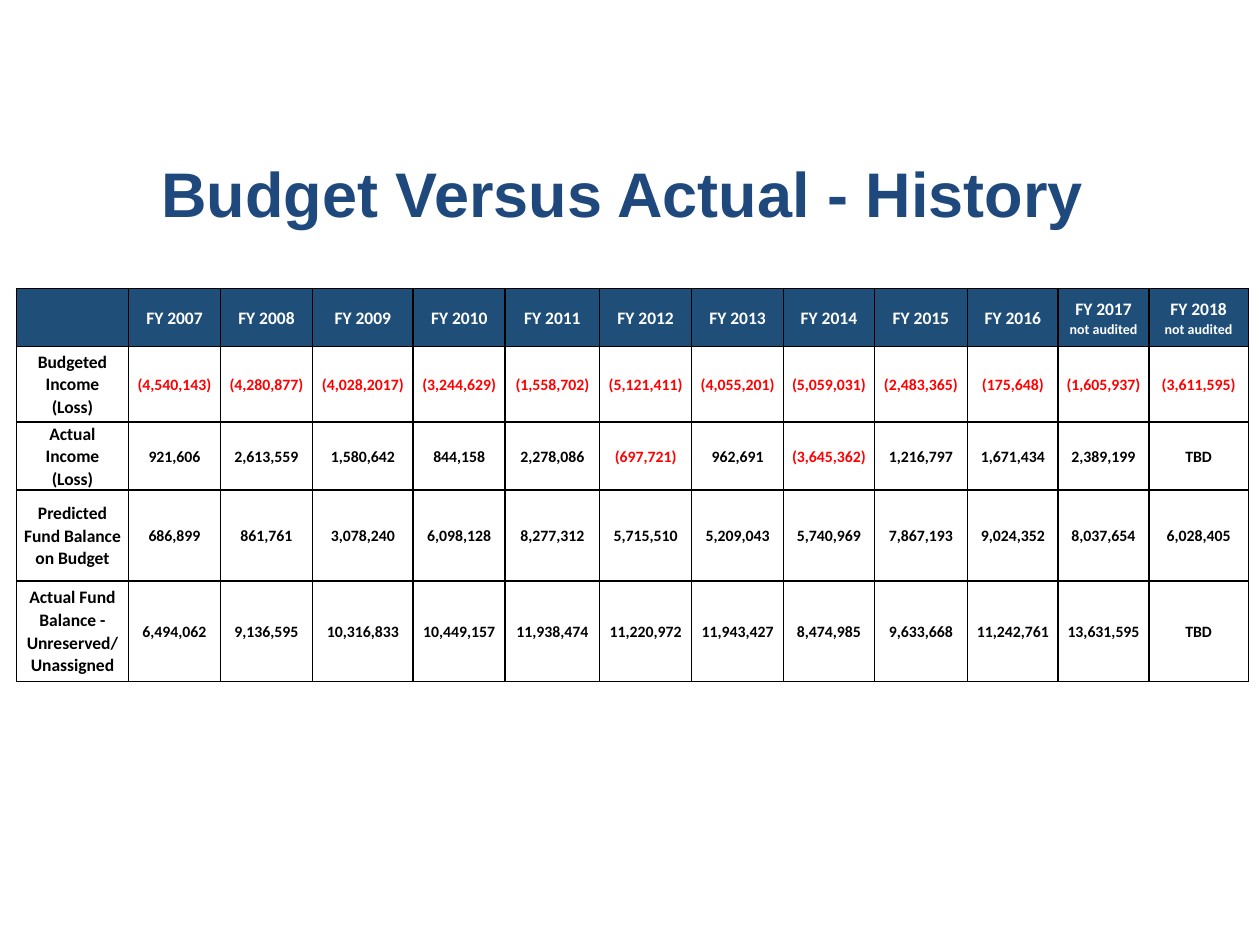
from lxml.etree import SubElement as Sub
from pptx import Presentation
from pptx.dml.color import RGBColor
from pptx.enum.text import MSO_ANCHOR as Anchor, PP_ALIGN as Align
from pptx.oxml.ns import qn
from pptx.util import Inches, Pt

NAVY = RGBColor(0x1F, 0x49, 0x7D)
BLUE = RGBColor(0x1F, 0x4E, 0x79)
WHITE = RGBColor(0xFF, 0xFF, 0xFF)
BLACK = RGBColor(0, 0, 0)
RED = RGBColor(0xFF, 0, 0)

TITLE = {"name": "Arial", "size": Pt(36), "bold": True}
HEAD = {"name": "Calibri", "size": Pt(10), "bold": True}
NOTE = HEAD | {"size": Pt(8)}
VALUE = HEAD | {"size": Pt(9)}
# Side margins leave room for the widest figure on one line
INSET = {"margin_left": Inches(0.06), "margin_right": Inches(0.06),
         "margin_top": 0, "margin_bottom": 0,
         "vertical_anchor": Anchor.MIDDLE}

COLS = [0.89, 0.73, 0.73, 0.8, 0.73, 0.75, 0.73, 0.73, 0.72, 0.74,
        0.72, 0.72, 0.79]
ROWS = [0.46, 0.6, 0.54, 0.72, 0.8]
YEARS = [f"FY {year}" for year in range(2007, 2019)]
OPEN = ("FY 2017", "FY 2018")
DATA = {
    "Budgeted Income (Loss)":
        "(4,540,143) (4,280,877) (4,028,2017) (3,244,629) (1,558,702) "
        "(5,121,411) (4,055,201) (5,059,031) (2,483,365) (175,648) "
        "(1,605,937) (3,611,595)",
    "Actual Income (Loss)":
        "921,606 2,613,559 1,580,642 844,158 2,278,086 (697,721) "
        "962,691 (3,645,362) 1,216,797 1,671,434 2,389,199 TBD",
    "Predicted Fund Balance on Budget":
        "686,899 861,761 3,078,240 6,098,128 8,277,312 5,715,510 "
        "5,209,043 5,740,969 7,867,193 9,024,352 8,037,654 6,028,405",
    "Actual Fund Balance - Unreserved/ Unassigned":
        "6,494,062 9,136,595 10,316,833 10,449,157 11,938,474 11,220,972 "
        "11,943,427 8,474,985 9,633,668 11,242,761 13,631,595 TBD",
}


def assign(item, values):
    for name, value in values.items():
        setattr(item, name, value)


def write(para, text, look, color):
    para.alignment = Align.CENTER
    para.text = text
    assign(para.font, look)
    para.font.color.rgb = color


def border(cell):
    props = cell._tc.get_or_add_tcPr()
    for i, side in enumerate(("a:lnL", "a:lnR", "a:lnT", "a:lnB")):
        line = Sub(props, qn(side), w=str(Pt(1)))
        fill = Sub(line, qn("a:solidFill"))
        Sub(fill, qn("a:srgbClr"), val=str(BLACK))
        # Lines come before the fill in the cell properties
        props.insert(i, line)


def add_title(slide, left, top, width, height):
    box = slide.shapes.add_textbox(left, top, width, height)
    frame = box.text_frame
    frame.word_wrap = True
    frame.vertical_anchor = Anchor.TOP
    write(frame.paragraphs[0], "Budget Versus Actual - History", TITLE, NAVY)


def fill_cell(cell, lines, color, back=None):
    assign(cell, INSET)
    if back is None:
        cell.fill.background()
    else:
        cell.fill.solid()
        cell.fill.fore_color.rgb = back
    border(cell)
    frame = cell.text_frame
    for i, (text, look) in enumerate(lines):
        para = frame.add_paragraph() if i else frame.paragraphs[0]
        write(para, text, look, color)
        para.line_spacing = 1.07


def add_budget(slide, left, top, width, height):
    frame = slide.shapes.add_table(len(ROWS), len(COLS), left, top, width, height)
    table = frame.table
    assign(table, {"first_row": False, "horz_banding": False})
    for col, share in zip(table.columns, COLS):
        col.width = int(width * share / sum(COLS))
    for row, share in zip(table.rows, ROWS):
        row.height = int(height * share / sum(ROWS))

    # Header row
    fill_cell(table.cell(0, 0), [("", HEAD)], WHITE, BLUE)
    for c, year in enumerate(YEARS, 1):
        lines = [(year, HEAD)]
        if year in OPEN:
            lines.append(("not audited", NOTE))
        fill_cell(table.cell(0, c), lines, WHITE, BLUE)

    # Body rows, with losses in red
    for r, (label, values) in enumerate(DATA.items(), 1):
        fill_cell(table.cell(r, 0), [(label, HEAD)], BLACK)
        for c, value in enumerate(values.split(), 1):
            color = RED if value.startswith("(") else BLACK
            fill_cell(table.cell(r, c), [(value, VALUE)], color)


def main():
    deck = Presentation()
    deck.slide_width, deck.slide_height = Inches(10), Inches(7.5)
    slide = deck.slides.add_slide(deck.slide_layouts[6])
    add_title(slide, Inches(0.44), Inches(1.18), Inches(9), Inches(1.03))
    add_budget(slide, Inches(0.13), Inches(2.29), Inches(9.78), Inches(3.12))
    deck.save("out.pptx")


if __name__ == "__main__":
    main()
